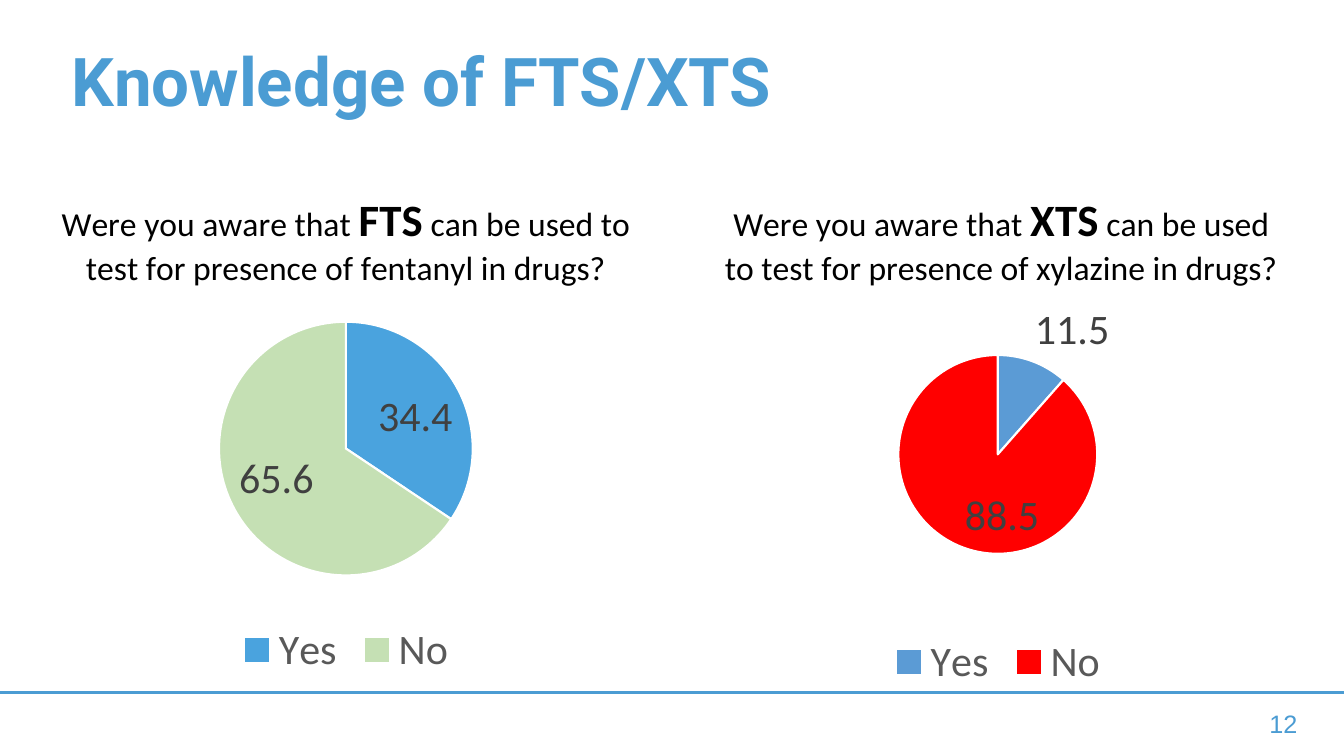
import pptx
import pptx.chart.data
import pptx.dml.color
import pptx.enum.chart
import pptx.enum.shapes
import pptx.enum.text
import pptx.util
from lxml import etree

Inches, Pt = pptx.util.Inches, pptx.util.Pt
LABEL = pptx.enum.chart.XL_LABEL_POSITION
BLUE = "4B9CD3"
TITLE = "Knowledge of FTS/XTS"
PAGE = "12"
ANSWERS = ["Yes", "No"]
# box and pie: left, top, width, height in inches on the slide
CHARTS = [
    {
        "question": ["Were you aware that ", "FTS", " can be used to test for presence of fentanyl in drugs?"],
        "values": [34.4, 65.6], "colors": ["4AA3DE", "C5E0B4"],
        "labels": [LABEL.INSIDE_END, LABEL.INSIDE_END],
        "box": (-0.39, 1.65, 7.65, 5.14), "pie": (2.17, 3.19, 2.52, 2.52),
        "heading": (0.58, 1.87),
    },
    {
        "question": ["Were you aware that ", "XTS", " can be used to test for presence of xylazine in drugs?"],
        "values": [11.5, 88.5], "colors": ["5B9BD5", "FF0000"],
        "labels": [LABEL.OUTSIDE_END, LABEL.INSIDE_END],
        "box": (6.34, 1.65, 7.12, 5.26), "pie": (8.91, 3.52, 1.97, 1.97),
        "heading": (7.16, 1.87),
    },
]


def rgb(color):
    return pptx.dml.color.RGBColor.from_string(color)


def style(font, color, **formats):
    font.color.rgb = rgb(color)
    for name, value in formats.items():
        setattr(font, name, value)


def set_layout(element, box, place, inner=False):
    """Place a chart part, given in slide inches, by fractions of its chart box."""
    left, top, width, height = box
    values = [("x", (place[0] - left) / width), ("y", (place[1] - top) / height)]
    if len(place) == 4:
        values += [("w", place[2] / width), ("h", place[3] / height)]
    ns = element.nsmap["c"]
    for old in element.findall(f"{{{ns}}}layout"):
        element.remove(old)
    layout = etree.Element(f"{{{ns}}}layout")
    manual = etree.SubElement(layout, f"{{{ns}}}manualLayout")
    modes = [("layoutTarget", "inner")] if inner else []
    modes += [("xMode", "edge"), ("yMode", "edge")]
    for tag, value in modes + [(tag, f"{v:.3f}") for tag, v in values]:
        etree.SubElement(manual, f"{{{ns}}}{tag}").set("val", value)
    tx = element.find(f"{{{ns}}}tx")
    element.insert(0 if tx is None else 1, layout)


def add_pie(slide, spec):
    data = pptx.chart.data.CategoryChartData(number_format="0.0")
    data.categories = ANSWERS
    data.add_series("Series 1", spec["values"])
    chart = slide.shapes.add_chart(
        pptx.enum.chart.XL_CHART_TYPE.PIE, *map(Inches, spec["box"]), data).chart
    style(chart.font, "000000", name="Calibri", size=Pt(10))

    chart.has_title = True
    p = chart.chart_title.text_frame.paragraphs[0]
    for i, text in enumerate(spec["question"]):
        r = p.add_run()
        r.text = text
        key = i == 1
        style(r.font, "000000", name="Calibri", size=Pt(32 if key else 24), bold=key)
    set_layout(chart.chart_title._element, spec["box"], spec["heading"])

    chart.has_legend = True
    chart.legend.position = pptx.enum.chart.XL_LEGEND_POSITION.BOTTOM
    chart.legend.include_in_layout = False
    style(chart.legend.font, "595959", name="Calibri", size=Pt(30))

    plot = chart.plots[0]
    plot.vary_by_categories = True
    for i, (color, position) in enumerate(zip(spec["colors"], spec["labels"])):
        point = plot.series[0].points[i]
        point.format.fill.solid()
        point.format.fill.fore_color.rgb = rgb(color)
        point.format.line.color.rgb = rgb("FFFFFF")
        point.format.line.width = Pt(1.5)
        style(point.data_label.font, "404040", name="Calibri", size=Pt(30))
        point.data_label.position = position
    set_layout(chart._chartSpace.chart.plotArea, spec["box"], spec["pie"], inner=True)


def write(sp, box, text, **formats):
    sp.left, sp.top, sp.width, sp.height = map(Inches, box)
    tf = sp.text_frame
    tf.word_wrap = True
    tf.vertical_anchor = pptx.enum.text.MSO_ANCHOR.MIDDLE
    p = tf.paragraphs[0]
    p.alignment = pptx.enum.text.PP_ALIGN.LEFT
    r = p.add_run()
    r.text = text
    style(r.font, BLUE, **formats)
    return p


prs = pptx.Presentation()
prs.slide_width, prs.slide_height = Inches(13.33), Inches(7.5)
s = prs.slides.add_slide(prs.slide_layouts.get_by_name("Title Only"))

rule = s.shapes.add_connector(pptx.enum.shapes.MSO_CONNECTOR.STRAIGHT,
                              0, Inches(6.87), prs.slide_width, Inches(6.87))
rule.line.color.rgb = rgb(BLUE)
rule.line.width = Pt(2.25)
etree.SubElement(rule._element.spPr, pptx.oxml.ns.qn("a:effectLst"))

title = write(s.shapes.title, (0.61, 0.47, 11.88, 0.75), TITLE,
              name="Roboto", size=Pt(48), bold=True)
title.line_spacing = 0.9
write(s.shapes.add_textbox(0, 0, 0, 0), (12.49, 6.98, 0.69, 0.4), PAGE,
      name="Arial", size=Pt(18))
for chart_spec in CHARTS:
    add_pie(s, chart_spec)

prs.save("out.pptx")
